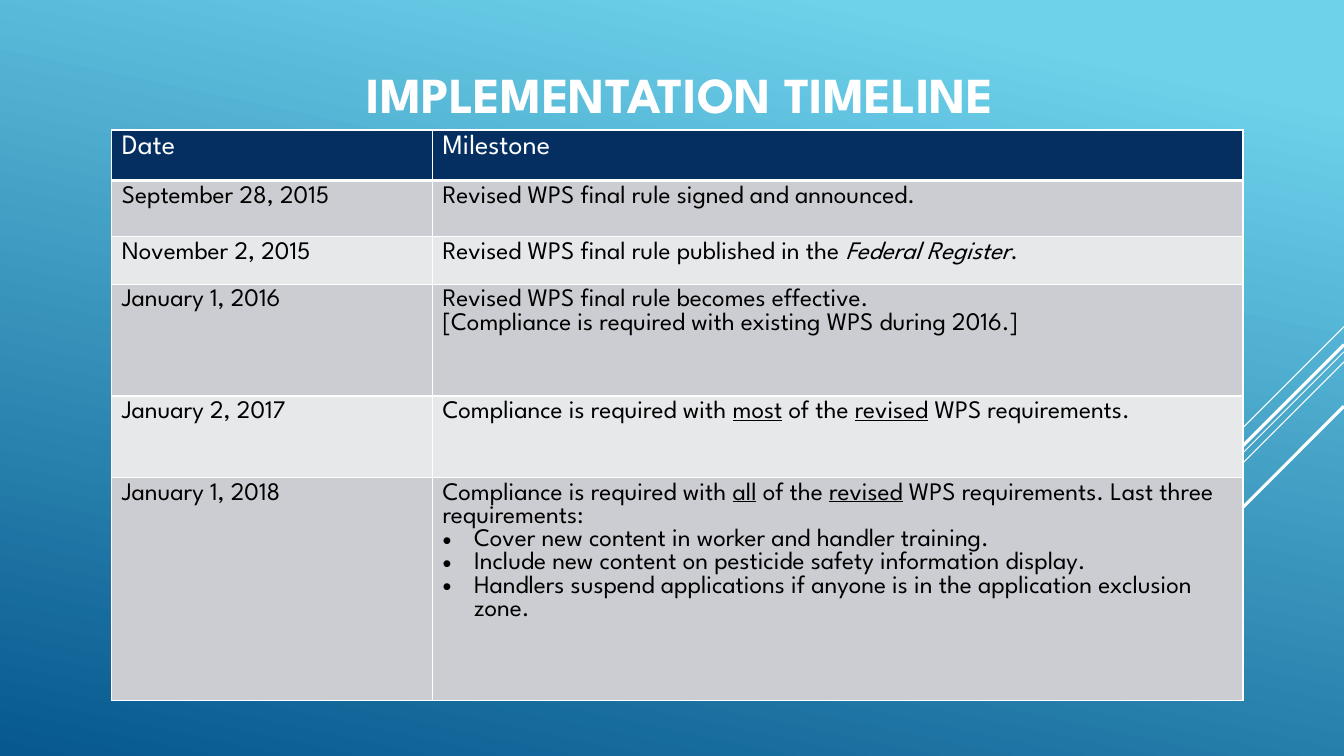
from lxml.etree import SubElement
from pptx import Presentation
from pptx.dml.color import RGBColor
from pptx.enum.shapes import MSO_CONNECTOR
from pptx.enum.text import MSO_ANCHOR, PP_ALIGN
from pptx.oxml.ns import qn
from pptx.util import Pt

FONT = "League Spartan"
COLORS = {
    "sky": "6ED2EB",
    "ocean": "06588E",
    "white": "FFFFFF",
    "black": "000000",
    "header": "052F61",
    "odd_row": "CCCDD2",
    "even_row": "E7E8EA",
}
STREAKS = [
    (233.3, 72, 0.75),
    (251.3, 234.7, 0.75),
    (258.5, 149, 0.75),
    (246.2, 137.5, 2.25),
    (290.2, 100.1, 2.25),
]
COLUMN_WIDTHS = [229, 579]
ROW_HEIGHTS = [36, 40.3, 33.8, 79.9, 58.3, 159.1]
BULLET_INDENT = 22.5
MILESTONES = [
    ("Date", [["Milestone"]]),
    ("September 28, 2015", [["Revised WPS final rule signed and announced."]]),
    ("November 2, 2015", [
        ["Revised WPS final rule published in the ", ("Federal Register", "italic"), "."],
    ]),
    ("January 1, 2016", [
        ["Revised WPS final rule becomes effective."],
        ["[Compliance is required with existing WPS during 2016.]"],
    ]),
    ("January 2, 2017", [
        ["Compliance is required with ", ("most", "underline"), " of the ",
         ("revised", "underline"), " WPS requirements."],
    ]),
    ("January 1, 2018", [
        ["Compliance is required with ", ("all", "underline"), " of the ",
         ("revised", "underline"), " WPS requirements. Last three requirements:"],
        "Cover new content in worker and handler training.",
        "Include new content on pesticide safety information display.",
        "Handlers suspend applications if anyone is in the application exclusion zone.",
    ]),
]


def color(name):
    """Return the named colour."""
    return RGBColor.from_string(COLORS[name])


def style_font(paragraph, size, color_name, bold=False):
    """Set the font of a whole paragraph."""
    font = paragraph.font
    font.name, font.size, font.bold = FONT, Pt(size), bold
    font.color.rgb = color(color_name)


def paint_background(slide):
    """Fill the slide with the slanted blue gradient."""
    fill = slide.background.fill
    fill.gradient()
    fill.gradient_angle = 258
    for stop, position, name in zip(fill.gradient_stops, (0.1, 1), ("sky", "ocean")):
        stop.position = position
        stop.color.rgb = color(name)


def add_streak(slide, right, top, reach, width):
    """Draw a 45-degree line from the right edge down to the left."""
    streak = slide.shapes.add_connector(
        MSO_CONNECTOR.STRAIGHT, right, Pt(top), right - Pt(reach), Pt(top + reach))
    streak.line.color.rgb = color("white")
    streak.line.width = Pt(width)
    SubElement(streak._element.spPr, qn("a:effectLst"))


def add_title(slide, text):
    """Add the centred slide title."""
    box = slide.shapes.add_textbox(Pt(157), Pt(27.4), Pt(657.4), Pt(77.8))
    frame = box.text_frame
    frame.word_wrap = True
    frame.vertical_anchor = MSO_ANCHOR.MIDDLE
    paragraph = frame.paragraphs[0]
    paragraph.text = text
    paragraph.alignment = PP_ALIGN.CENTER
    style_font(paragraph, 36, "white", bold=True)


def add_bullet(paragraph):
    """Give a paragraph a hanging bullet."""
    properties = paragraph._p.get_or_add_pPr()
    properties.set("marL", str(Pt(BULLET_INDENT)))
    properties.set("indent", str(-Pt(BULLET_INDENT)))
    SubElement(properties, qn("a:buFont"), typeface="Arial")
    SubElement(properties, qn("a:buChar"), char="•")


def write_paragraph(paragraph, content, size, color_name):
    """Write a list of runs, or a plain string as a bullet."""
    if isinstance(content, str):
        add_bullet(paragraph)
        content = [content]
    for piece in content:
        text, emphasis = (piece, None) if isinstance(piece, str) else piece
        run = paragraph.add_run()
        run.text = text
        if emphasis:
            setattr(run.font, emphasis, True)
    style_font(paragraph, size, color_name)


def add_borders(cell, bottom_width):
    """Draw white borders around a cell."""
    properties = cell._tc.get_or_add_tcPr()
    for side, width in (("lnL", 1), ("lnR", 1), ("lnT", 1), ("lnB", bottom_width)):
        line = SubElement(properties, qn(f"a:{side}"), w=str(Pt(width)))
        fill = SubElement(line, qn("a:solidFill"))
        SubElement(fill, qn("a:srgbClr"), val=COLORS["white"])


def fill_cell(cell, paragraphs, row_index):
    """Style a cell by its row and write its paragraphs."""
    is_header = row_index == 0
    add_borders(cell, 3 if is_header else 1)
    cell.fill.solid()
    band = "odd_row" if row_index % 2 else "even_row"
    cell.fill.fore_color.rgb = color("header" if is_header else band)
    size, color_name = (20, "white") if is_header else (18, "black")
    frame = cell.text_frame
    for index, content in enumerate(paragraphs):
        paragraph = frame.add_paragraph() if index else frame.paragraphs[0]
        write_paragraph(paragraph, content, size, color_name)


def add_timeline(slide):
    """Add the table of dates and milestones."""
    table = slide.shapes.add_table(
        len(ROW_HEIGHTS), len(COLUMN_WIDTHS), Pt(79.9), Pt(92.9),
        Pt(sum(COLUMN_WIDTHS)), Pt(sum(ROW_HEIGHTS))).table
    for column, width in zip(table.columns, COLUMN_WIDTHS):
        column.width = Pt(width)
    for row_index, (date, milestone) in enumerate(MILESTONES):
        table.rows[row_index].height = Pt(ROW_HEIGHTS[row_index])
        fill_cell(table.cell(row_index, 0), [[date]], row_index)
        fill_cell(table.cell(row_index, 1), milestone, row_index)


def main():
    """Build the slide and save it."""
    presentation = Presentation()
    presentation.slide_width, presentation.slide_height = Pt(960), Pt(540)
    slide = presentation.slides.add_slide(presentation.slide_layouts[6])
    paint_background(slide)
    for top, reach, width in STREAKS:
        add_streak(slide, presentation.slide_width, top, reach, width)
    add_title(slide, "IMPLEMENTATION TIMELINE")
    add_timeline(slide)
    presentation.save("out.pptx")


if __name__ == "__main__":
    main()
